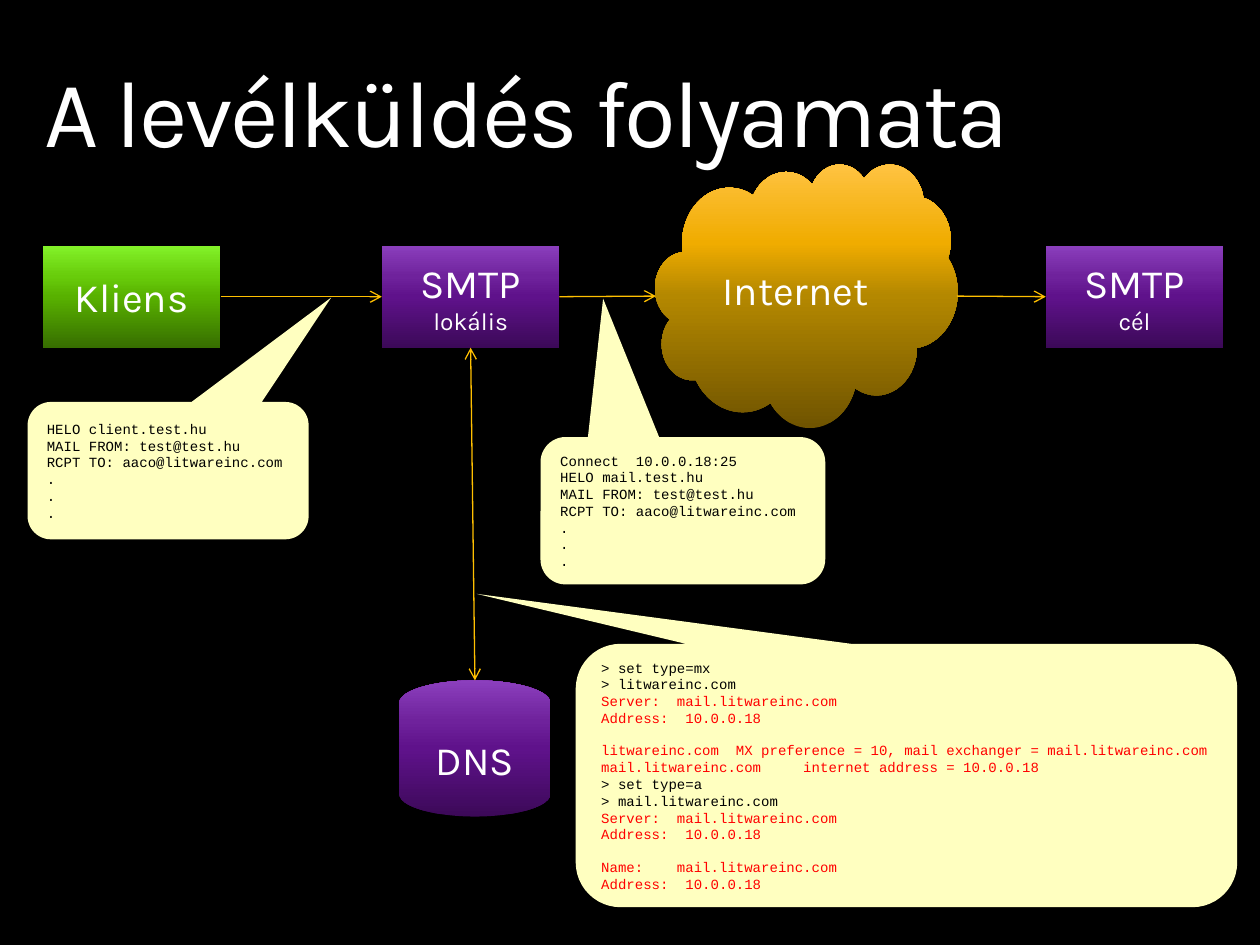
"""Build a slide showing how a mail travels from client to target server."""
from dataclasses import dataclass

from lxml import etree
from pptx import Presentation
from pptx.dml.color import RGBColor
from pptx.enum.shapes import MSO_CONNECTOR, MSO_SHAPE
from pptx.enum.text import MSO_ANCHOR, MSO_AUTO_SIZE, PP_ALIGN
from pptx.oxml.ns import qn
from pptx.util import Pt

RECT = MSO_SHAPE.RECTANGLE
DISK = MSO_SHAPE.FLOWCHART_MAGNETIC_DISK
CLOUD = MSO_SHAPE.CLOUD
NOTE = MSO_SHAPE.ROUNDED_RECTANGULAR_CALLOUT
LINE = MSO_CONNECTOR.STRAIGHT
MIDDLE = MSO_ANCHOR.MIDDLE
LEFT, CENTER = PP_ALIGN.LEFT, PP_ALIGN.CENTER
FIXED = MSO_AUTO_SIZE.NONE

SANS, MONO = "Karla", "Courier New"
WHITE, BLACK, RED = "FFFFFF", "000000", "FF0000"
CREAM, AMBER = "FFFFC0", "FFC000"
STOPS = (0, 50, 70, 100)
PURPLE = ("3C0958", "5F128B", "6F229C", "8B3FBD")
GREEN = ("376E00", "58B100", "68CC0B", "83F229")
GOLD = ("705400", "B48800", "F0AC00", "FFC342")
TOP, WIDE, HIGH = 140.4, 101.5, 58.3
GAP = 9.06


@dataclass
class Node:
    """A step of the mail route."""
    name: str
    kind: int
    box: tuple
    ramp: tuple
    text: str


@dataclass
class Link:
    """An arrow whose ends are (node name, site) or a point."""
    start: tuple
    end: tuple
    both: bool = False


@dataclass
class Note:
    """A callout with a session log."""
    box: tuple
    tip: tuple
    lines: tuple
    gaps: tuple = ()
    reply: str = BLACK


NODES = (
    Node("local", RECT, (218.2, TOP, WIDE, HIGH), PURPLE, "SMTP\nlokális"),
    Node("dns", DISK, (228.2, 388.8, 86.4, 77.8), PURPLE, "DNS"),
    Node("target", RECT, (597.6, TOP, WIDE, HIGH), PURPLE, "SMTP\ncél"),
    Node("client", RECT, (24.5, TOP, WIDE, HIGH), GREEN, "Kliens"),
    Node("net", CLOUD, (374.4, 93.6, 172.8, 150.5), GOLD, "Internet"),
)
LINKS = (
    Link(("client", 3), ("local", 1)),
    Link(("local", 3), (374.8, 169.2)),
    Link((546.8, 169.2), ("target", 1)),
    Link(("local", 2), (271.4, 388.8), True),
)
MAIL = ("MAIL FROM: test@test.hu", "RCPT TO: aaco@litwareinc.com", ".", ".", ".")
SERVER = ("Server:  mail.litwareinc.com", "Address:  10.0.0.18")
NOTES = (
    Note((15.8, 229.7, 160.6, 78.5), (0.58, -1.26),
         ("HELO client.test.hu", *MAIL)),
    Note((329, 367.9, 378, 150.5), (-0.65, -0.69),
         ("> set type=mx", "> litwareinc.com", *SERVER,
          "litwareinc.com  MX preference = 10, mail exchanger = mail.litwareinc.com",
          "mail.litwareinc.com     internet address = 10.0.0.18",
          "> set type=a", "> mail.litwareinc.com", *SERVER,
          "Name:    mail.litwareinc.com", "Address:  10.0.0.18"),
         (4, 10), RED),
    Note((308.9, 249.8, 162.7, 84.2), (-0.28, -1.44),
         ("Connect  10.0.0.18:25", "HELO mail.test.hu", *MAIL)),
)


def tint(color, code: str) -> None:
    """Set a colour from its hex string."""
    color.rgb = RGBColor.from_string(code)


def style(par, face: str, size: float, code: str) -> None:
    """Format all runs of a paragraph."""
    for run in par.runs:
        run.font.name, run.font.size = face, Pt(size)
        tint(run.font.color, code)


def block(slide, kind: int, box: tuple, text: str):
    """Add a plain shape with centred-height text."""
    shape = slide.shapes.add_shape(kind, *map(Pt, box))
    shape.shadow.inherit = False
    shape.line.fill.background()
    shape.text_frame.text = text
    shape.text_frame.word_wrap = True
    shape.text_frame.vertical_anchor = MIDDLE
    return shape


def shade(shape, ramp: tuple) -> None:
    """Fill a shape with a ramp rising from the bottom."""
    shape.fill.gradient()
    shape.fill.gradient_angle = 90
    stops = next(shape.element.spPr.iter(qn("a:gsLst")))
    for old in list(stops):
        stops.remove(old)
    for pos, code in zip(STOPS, ramp):
        stop = etree.SubElement(stops, qn("a:gs"), pos=str(pos * 1000))
        etree.SubElement(stop, qn("a:srgbClr"), val=code)


def draw_node(slide, node: Node):
    """Draw one step with its label."""
    shape = block(slide, node.kind, node.box, node.text)
    shade(shape, node.ramp)
    for par, size in zip(shape.text_frame.paragraphs, (23, 14)):
        par.alignment = CENTER
        style(par, SANS, size, WHITE)
    return shape


def draw_link(slide, link: Link, nodes: dict) -> None:
    """Draw one arrow, joined where it meets a rectangle."""
    ends = (link.start, link.end)
    spots = [(0, 0) if end[0] in nodes else end for end in ends]
    line = slide.shapes.add_connector(LINE, *(Pt(v) for spot in spots for v in spot))
    for end, join in zip(ends, (line.begin_connect, line.end_connect)):
        if end[0] in nodes:
            join(nodes[end[0]], end[1])
    line.line.width = Pt(0.75)
    tint(line.line.color, AMBER)
    props = line.element.spPr
    for tag in ("a:headEnd", "a:tailEnd") if link.both else ("a:tailEnd",):
        etree.SubElement(props.find(qn("a:ln")), qn(tag), type="arrow")
    etree.SubElement(props, qn("a:effectLst"))


def draw_note(slide, note: Note) -> None:
    """Draw one callout with its log."""
    shape = block(slide, NOTE, note.box, "\n".join(note.lines))
    shape.fill.solid()
    tint(shape.fill.fore_color, CREAM)
    for i, value in enumerate((*note.tip, 0.17)):
        shape.adjustments[i] = value
    for i, par in enumerate(shape.text_frame.paragraphs):
        par.alignment = LEFT
        if i in note.gaps:
            par.space_before = Pt(GAP)
        style(par, MONO, 8, BLACK if par.text.startswith(">") else note.reply)


def draw_title(slide, text: str) -> None:
    """Place and format the slide title."""
    title = slide.shapes.title
    title.left, title.top, title.width, title.height = map(Pt, (18, 21.6, 684, 90))
    frame = title.text_frame
    frame.text = text
    frame.word_wrap = True
    frame.auto_size = FIXED
    frame.vertical_anchor = MIDDLE
    par = frame.paragraphs[0]
    par.alignment, par.line_spacing = LEFT, 0.9
    style(par, SANS, 54, WHITE)
    par.runs[0].font._element.set("spc", "-150")


def main() -> None:
    """Build and save the deck."""
    deck = Presentation()
    deck.slide_width, deck.slide_height = Pt(720), Pt(540)
    slide = deck.slides.add_slide(deck.slide_layouts[5])
    slide.background.fill.solid()
    tint(slide.background.fill.fore_color, BLACK)
    draw_title(slide, "A levélküldés folyamata")
    nodes = {node.name: draw_node(slide, node) for node in NODES}
    for link in LINKS:
        draw_link(slide, link, nodes)
    for note in NOTES:
        draw_note(slide, note)
    deck.save("out.pptx")


if __name__ == "__main__":
    main()
